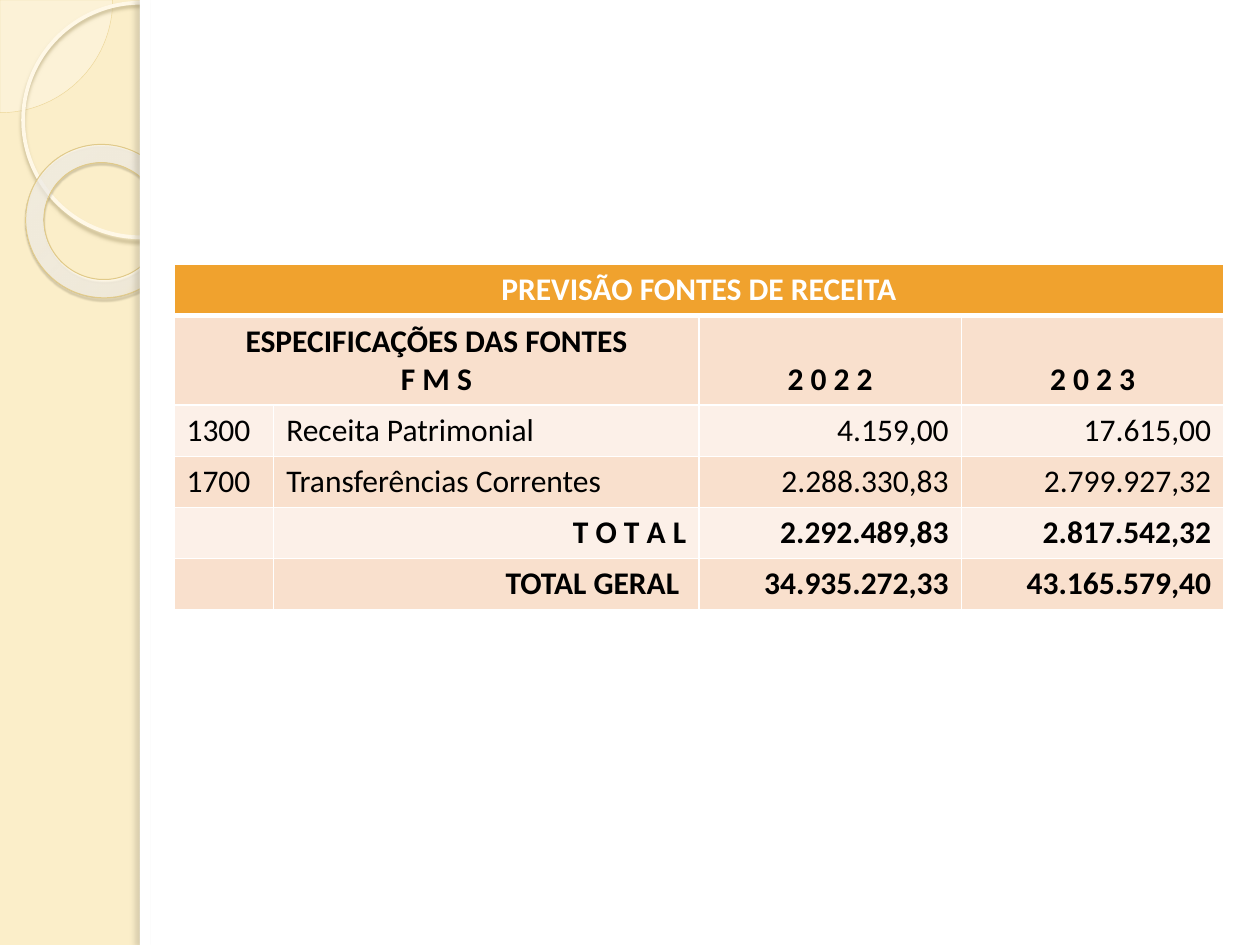
from lxml import etree
from pptx import Presentation
from pptx.dml.color import RGBColor
from pptx.enum.shapes import MSO_SHAPE as Preset
from pptx.enum.text import MSO_ANCHOR as Anchor, PP_ALIGN as Align
from pptx.oxml import parse_xml
from pptx.oxml.ns import nsdecls, qn
from pptx.util import Pt

COLORS = {
    "cream": "FBEEC9", "white": "FFFFFF", "black": "000000",
    "pie": "FFFCF6", "pie_line": "ECD697",
    "ring": "FFF8E7", "ring_shadow": "C3B58B",
    "donut_line": "E1CA89", "donut_shadow": "655C41",
    "edge_shadow": "7E7763",
    "header": "F0A22E", "dark_band": "F9E0CD", "light_band": "FCF0E8",
}


def add_decoration(preset, bounds, fill=None, line=None, shadow=None):
    shape = page.shapes.add_shape(preset, *[Pt(value) for value in bounds])
    shape.shadow.inherit = False
    if fill:
        shape.fill.solid()
        shape.fill.fore_color.rgb = RGBColor.from_string(COLORS[fill])
    else:
        shape.fill.background()
    if line:
        shape.line.color.rgb = RGBColor.from_string(COLORS[line[0]])
        shape.line.width = Pt(line[1])
    else:
        shape.line.fill.background()
    if shadow:
        color, alpha, blur, distance, angle = shadow
        shape.element.spPr.find(qn("a:effectLst")).append(parse_xml(
            f'<a:outerShdw {nsdecls("a")} blurRad="{Pt(blur)}" dist="{Pt(distance)}" '
            f'dir="{angle * 60000}" algn="tl" rotWithShape="0">'
            f'<a:srgbClr val="{COLORS[color]}"><a:alpha val="{alpha * 1000}"/></a:srgbClr>'
            '</a:outerShdw>'))
    return shape


def add_border(cell, side, width):
    properties = cell._tc.get_or_add_tcPr()
    border = etree.SubElement(properties, qn(f"a:ln{side}"), w=str(Pt(width)))
    solid = etree.SubElement(border, qn("a:solidFill"))
    etree.SubElement(solid, qn("a:srgbClr"), val=COLORS["white"])


deck = Presentation()
deck.slide_width, deck.slide_height = Pt(720), Pt(540)
page = deck.slides.add_slide(deck.slide_layouts[6])
page.background.fill.solid()
page.background.fill.fore_color.rgb = RGBColor.from_string(COLORS["cream"])

pie = add_decoration(Preset.PIE, (-64.4, -64.4, 128.8, 128.8), "pie", ("pie_line", 0.25))
pie.adjustments[0] = 0
pie.adjustments[1] = 54.02
pie_color = pie.element.spPr.find(qn("a:solidFill")).find(qn("a:srgbClr"))
etree.SubElement(pie_color, qn("a:alpha"), val="33000")

add_decoration(Preset.OVAL, (13.2, 1.6, 134, 134), line=("ring", 2.15),
               shadow=("ring_shadow", 85, 2, 2, 90))

donut = add_decoration(Preset.DONUT, (14.4, 82.8, 88.6, 87.1), line=("donut_line", 0.58),
                       shadow=("donut_shadow", 35, 1, 1.2, 75))
donut.adjustments[0] = 0.12
donut.rotation = 38.6
stops = "".join(
    f'<a:gs pos="{position * 1000}"><a:srgbClr val="{color}">'
    f'<a:alpha val="{alpha * 1000}"/></a:srgbClr></a:gs>'
    for position, color, alpha in [(0, "FFFDF8", 70), (70, "FFFEFC", 55), (100, "FFE290", 60)])
no_fill = donut.element.spPr.find(qn("a:noFill"))
donut.element.spPr.replace(no_fill, parse_xml(
    f'<a:gradFill {nsdecls("a")} rotWithShape="1"><a:gsLst>{stops}</a:gsLst>'
    '<a:path path="circle"><a:fillToRect l="-408000" t="-50000" r="508000" b="150000"/>'
    '</a:path></a:gradFill>'))

add_decoration(Preset.RECTANGLE, (80, 0, 640, 540), "white")
add_decoration(Preset.RECTANGLE, (80, 0, 5.8, 540), "white",
               shadow=("edge_shadow", 25, 3, 3, 180))

rows = [
    ["PREVISÃO FONTES DE RECEITA", "", "", ""],
    ["ESPECIFICAÇÕES DAS FONTES\nF M S", "", "2 0 2 2", "2 0 2 3"],
    ["1300", "Receita Patrimonial", "4.159,00", "17.615,00"],
    ["1700", "Transferências Correntes", "2.288.330,83", "2.799.927,32"],
    ["", "T O T A L", "2.292.489,83", "2.817.542,32"],
    ["", "TOTAL GERAL ", "34.935.272,33", "43.165.579,40"],
]
column_widths = [57, 243, 150, 150]
row_heights = [29.2, 50.8] + [29.2] * 4

table = page.shapes.add_table(len(rows), len(column_widths), Pt(99.4), Pt(151.2),
                              Pt(sum(column_widths)), Pt(sum(row_heights))).table
table.first_row = False
table.horz_banding = False
for column, width in zip(table.columns, column_widths):
    column.width = Pt(width)
for row, height in zip(table.rows, row_heights):
    row.height = Pt(height)
table.cell(0, 0).merge(table.cell(0, 3))
table.cell(1, 0).merge(table.cell(1, 1))

for row_index, texts in enumerate(rows):
    is_header = row_index == 0
    band = "header" if is_header else "dark_band" if row_index % 2 else "light_band"
    for column_index, text in enumerate(texts):
        cell = table.cell(row_index, column_index)
        for side in "LRTB":
            thick = (side == "B" and is_header) or (side == "T" and row_index == 1)
            add_border(cell, side, 3 if thick else 1)
        cell.fill.solid()
        cell.fill.fore_color.rgb = RGBColor.from_string(COLORS[band])
        if row_index == 1 and column_index > 1:
            cell.vertical_anchor = Anchor.BOTTOM
        if cell.is_spanned:
            continue
        cell.text_frame.text = text
        for para in cell.text_frame.paragraphs:
            if row_index < 2:
                para.alignment = Align.CENTER
            elif column_index > 1 or row_index > 3:
                para.alignment = Align.RIGHT
            para.font.size = Pt(18)
            for span in para.runs:
                span.font.name = "Calibri"
                span.font.size = Pt(18)
                span.font.bold = row_index not in (2, 3)
                span.font.color.rgb = RGBColor.from_string(
                    COLORS["white" if is_header else "black"])

deck.save("out.pptx")
